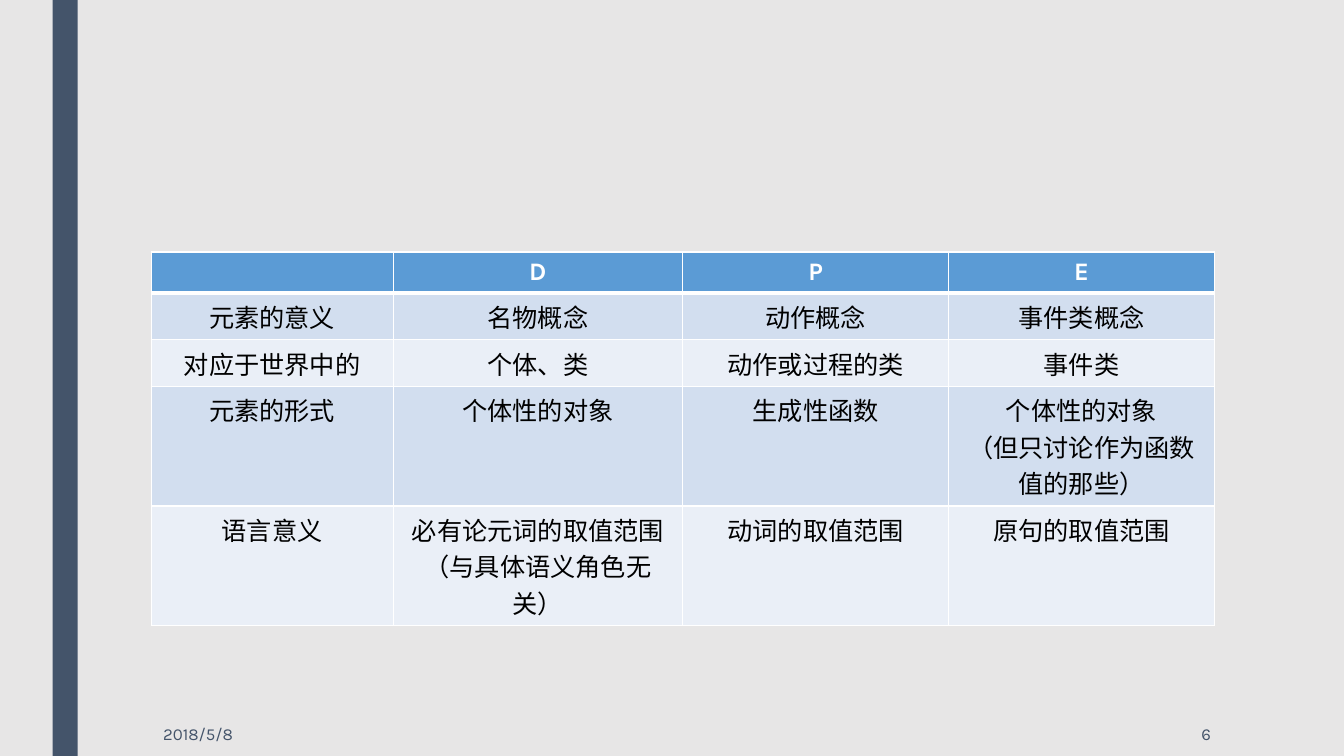
from lxml import etree
from pptx import Presentation
from pptx.dml.color import RGBColor
from pptx.enum.shapes import MSO_SHAPE
from pptx.enum.text import MSO_ANCHOR, PP_ALIGN
from pptx.oxml.ns import qn
from pptx.util import Pt

RECTANGLE = MSO_SHAPE.RECTANGLE
MIDDLE = MSO_ANCHOR.MIDDLE
LEFT, CENTER, RIGHT = PP_ALIGN.LEFT, PP_ALIGN.CENTER, PP_ALIGN.RIGHT

FONT = "Karla"
BACKGROUND, NAVY, WHITE, BLACK = "E7E6E6", "44546A", "FFFFFF", "000000"
HEADER_FILL, BAND_FILLS = "5B9BD5", ("D2DEEF", "EAEFF7")

COLUMN_WIDTHS = (172.8, 206.8, 190, 190)
ROW_HEIGHT = 29.5
ROWS = (
    ("", "D", "P", "E"),
    ("元素的意义", "名物概念", "动作概念", "事件类概念"),
    ("对应于世界中的", "个体、类", "动作或过程的类", "事件类"),
    ("元素的形式", "个体性的对象", "生成性函数",
     "个体性的对象\n（但只讨论作为函数值的那些）"),
    ("语言意义", "必有论元词的取值范围（与具体语义角色无关）",
     "动词的取值范围", "原句的取值范围"),
)


def paint(fill, color):
    fill.solid()
    fill.fore_color.rgb = RGBColor.from_string(color)


def format_text(frame, size, color, align, bold=False):
    for paragraph in frame.paragraphs:
        paragraph.alignment = align
        paragraph.font.name = FONT
        paragraph.font.size = Pt(size)
        paragraph.font.bold = bold
        paragraph.font.color.rgb = RGBColor.from_string(color)


def set_borders(cell, color, bottom_width):
    properties = cell._tc.get_or_add_tcPr()
    widths = {"a:lnL": 1, "a:lnR": 1, "a:lnT": 1, "a:lnB": bottom_width}
    for position, (side, width) in enumerate(widths.items()):
        line = etree.Element(qn(side), w=str(Pt(width)))
        fill = etree.SubElement(line, qn("a:solidFill"))
        etree.SubElement(fill, qn("a:srgbClr"), val=color)
        properties.insert(position, line)


def add_sidebar(slide):
    sidebar = slide.shapes.add_shape(RECTANGLE, Pt(37.5), 0, Pt(18), Pt(540))
    sidebar.shadow.inherit = False
    paint(sidebar.fill, NAVY)
    sidebar.line.fill.background()


def add_concept_table(slide):
    table = slide.shapes.add_table(
        len(ROWS), len(COLUMN_WIDTHS), Pt(108), Pt(180),
        Pt(sum(COLUMN_WIDTHS)), Pt(ROW_HEIGHT * len(ROWS))).table
    for column, width in zip(table.columns, COLUMN_WIDTHS):
        column.width = Pt(width)
    for row_index, texts in enumerate(ROWS):
        is_header = row_index == 0
        fill = HEADER_FILL if is_header else BAND_FILLS[(row_index - 1) % 2]
        for column_index, text in enumerate(texts):
            cell = table.cell(row_index, column_index)
            cell.text = text
            format_text(cell.text_frame, 18, WHITE if is_header else BLACK,
                        CENTER, is_header)
            paint(cell.fill, fill)
            set_borders(cell, WHITE, 3 if is_header else 1)


def add_footer(slide, text, left, width, align):
    footer = slide.shapes.add_textbox(Pt(left), Pt(508.3), Pt(width), Pt(31.7))
    frame = footer.text_frame
    frame.word_wrap = True
    frame.vertical_anchor = MIDDLE
    frame.text = text
    format_text(frame, 12, NAVY, align)


def main():
    presentation = Presentation()
    presentation.slide_width = Pt(960)
    presentation.slide_height = Pt(540)
    slide = presentation.slides.add_slide(presentation.slide_layouts[6])
    paint(slide.background.fill, BACKGROUND)
    add_sidebar(slide)
    add_concept_table(slide)
    add_footer(slide, "2018/5/8", 109.5, 95, LEFT)
    add_footer(slide, "6", 746, 126, RIGHT)
    presentation.save("out.pptx")


if __name__ == "__main__":
    main()
